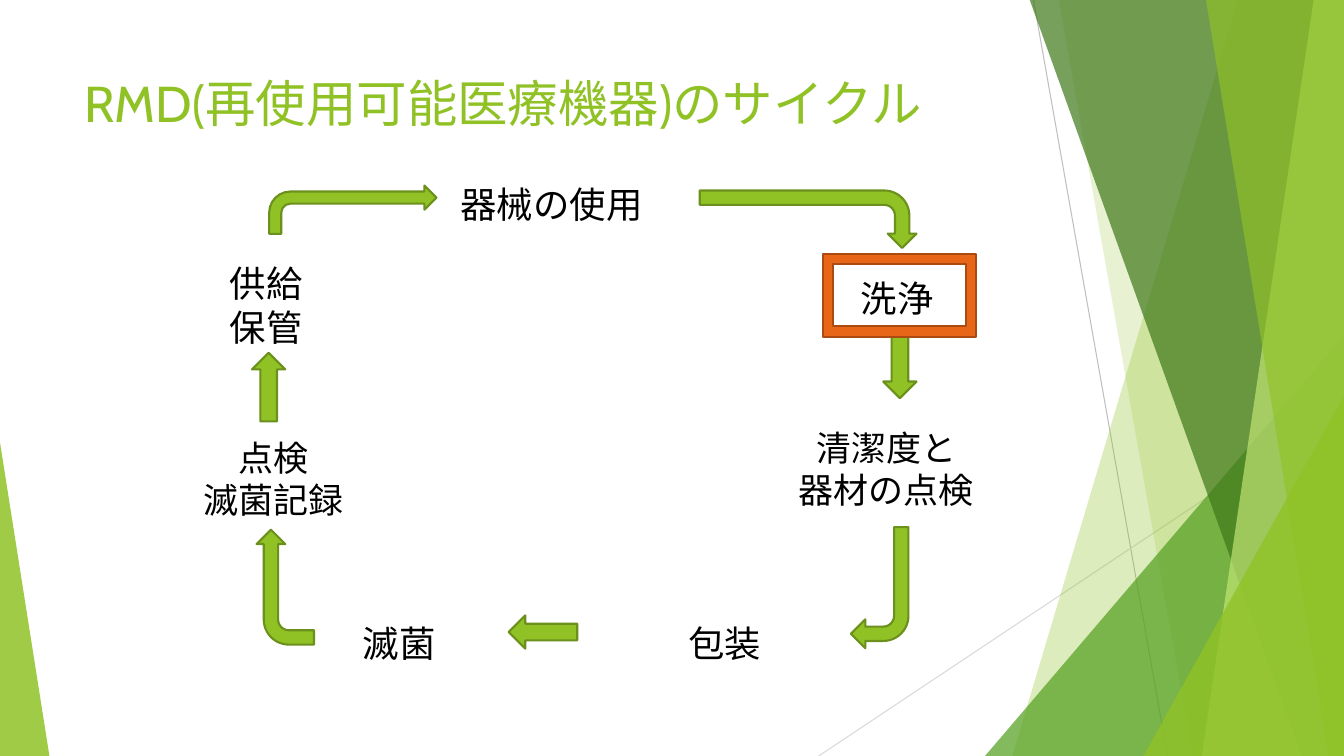
from lxml.etree import SubElement
from pptx import Presentation
from pptx.dml.color import RGBColor
from pptx.enum.shapes import MSO_CONNECTOR, MSO_SHAPE as SHAPE
from pptx.enum.text import PP_ALIGN as ALIGN
from pptx.oxml.ns import qn
from pptx.util import Inches, Pt

GREEN = RGBColor(0x90, 0xC2, 0x26)
LEAF = RGBColor(0x54, 0xA0, 0x21)
FOREST = RGBColor(0x3F, 0x78, 0x19)
LIME = RGBColor(0xC0, 0xE4, 0x74)
OLIVE = RGBColor(0x6B, 0x90, 0x1C)
ORANGE = RGBColor(0xE7, 0x66, 0x18)
RUST = RGBColor(0xAB, 0x4B, 0x12)
GREY = RGBColor(0xBF, 0xBF, 0xBF)
PALE_GREY = RGBColor(0xD9, 0xD9, 0xD9)
BLACK = RGBColor(0, 0, 0)
WIDTH, HEIGHT = 13.33, 7.5

deck = Presentation()
deck.slide_width, deck.slide_height = Inches(WIDTH), Inches(HEIGHT)
slide = deck.slides.add_slide(deck.slide_layouts[6])
shapes = slide.shapes


def add_text(text, left, top, width, height, size=26, color=BLACK, align=ALIGN.LEFT):
    frame = shapes.add_textbox(*map(Inches, (left, top, width, height))).text_frame
    frame.word_wrap = True
    frame.text = text
    for paragraph in frame.paragraphs:
        paragraph.alignment = align
        font = paragraph.runs[0].font
        font.name, font.size, font.color.rgb = "Cabin", Pt(size), color


def paint(shape, fill, line=None, opacity=100):
    shape.shadow.inherit = False
    shape.fill.solid()
    shape.fill.fore_color.rgb = fill
    if opacity < 100:
        tint = shape.fill._xPr.find(qn("a:solidFill"))[0]
        SubElement(tint, qn("a:alpha"), val=str(opacity * 1000))
    if line is None:
        shape.line.fill.background()
    else:
        shape.line.color.rgb = line
        shape.line.width = Pt(1.5)


for x1, y1, x2, y2, color in [
    (10.25, 0, 11.58, HEIGHT, GREY),
    (WIDTH, 4.03, 8.12, HEIGHT, PALE_GREY),
]:
    ray = shapes.add_connector(MSO_CONNECTOR.STRAIGHT, *map(Inches, (x1, y1, x2, y2)))
    ray.line.color.rgb = color
    ray.line.width = Pt(0.75)
    SubElement(ray._element.spPr, qn("a:effectLst"))

BAND, TRIANGLE = "band", "triangle"
for kind, place, color, opacity in [
    (BAND, (12.28, 10.04), GREEN, 30),
    (BAND, (10.5, 11.83), GREEN, 20),
    (TRIANGLE, (9.77, 3.33, 3.56, 1), LEAF, 72),
    (BAND, (10.21, 12.91), FOREST, 70),
    (BAND, (13.03, 11.92), LIME, 70),
    (BAND, (11.96, 13.18), GREEN, 65),
    (TRIANGLE, (11.34, 3.93, 1.99, 1), GREEN, 80),
    (TRIANGLE, (0, 4.39, 0.49, 0), GREEN, 85),
]:
    if kind == BAND:
        top_x, bottom_x = place
        outline = shapes.build_freeform(Inches(top_x), Inches(-0.01))
        corners = [(WIDTH, -0.01), (WIDTH, HEIGHT), (bottom_x, HEIGHT)]
        outline.add_line_segments([(Inches(x), Inches(y)) for x, y in corners])
        facet = outline.convert_to_shape()
    else:
        left, top, width, apex = place
        facet = shapes.add_shape(
            SHAPE.ISOSCELES_TRIANGLE, *map(Inches, (left, top, width, HEIGHT - top)))
        facet.adjustments[0] = apex
    paint(facet, color, opacity=opacity)

add_text("RMD(再使用可能医療機器)のサイクル", 0.74, 0.67, 9.4, 1.44, size=36, color=GREEN)
add_text("器械の使用", 4.47, 1.76, 2.2, 0.54)
add_text("洗浄", 8.44, 2.69, 0.97, 0.54)
add_text("清潔度と\n器材の点検", 7.44, 4.18, 2.7, 0.94, size=25, align=ALIGN.CENTER)
add_text("包装", 6.73, 6.11, 2, 0.54)
add_text("滅菌", 3.5, 6.11, 0.97, 0.54)
add_text("点検\n滅菌記録", 1.56, 4.28, 2.3, 0.94, size=25, align=ALIGN.CENTER)
add_text("供給\n保管", 2.18, 2.54, 0.97, 0.98)

for preset, left, top, width, height, rotation in [
    (SHAPE.BENT_ARROW, 7.73, 1.1, 0.57, 2.15, 90),
    (SHAPE.UP_ARROW, 8.76, 3.27, 0.33, 0.68, 180),
    (SHAPE.BENT_ARROW, 8.44, 5.23, 0.57, 1.2, 180),
    (SHAPE.UP_ARROW, 5.22, 5.93, 0.33, 0.68, 270),
    (SHAPE.BENT_ARROW, 2.26, 5.54, 1.14, 0.57, 270),
    (SHAPE.UP_ARROW, 2.5, 3.5, 0.33, 0.68, 0),
    (SHAPE.BENT_ARROW, 2.67, 1.84, 1.66, 0.48, 0),
]:
    arrow = shapes.add_shape(preset, *map(Inches, (left, top, width, height)))
    arrow.rotation = rotation
    paint(arrow, GREEN, OLIVE)

washing_frame = shapes.add_shape(SHAPE.FRAME, *map(Inches, (8.16, 2.52, 1.52, 0.82)))
paint(washing_frame, ORANGE, RUST)

deck.save("out.pptx")
